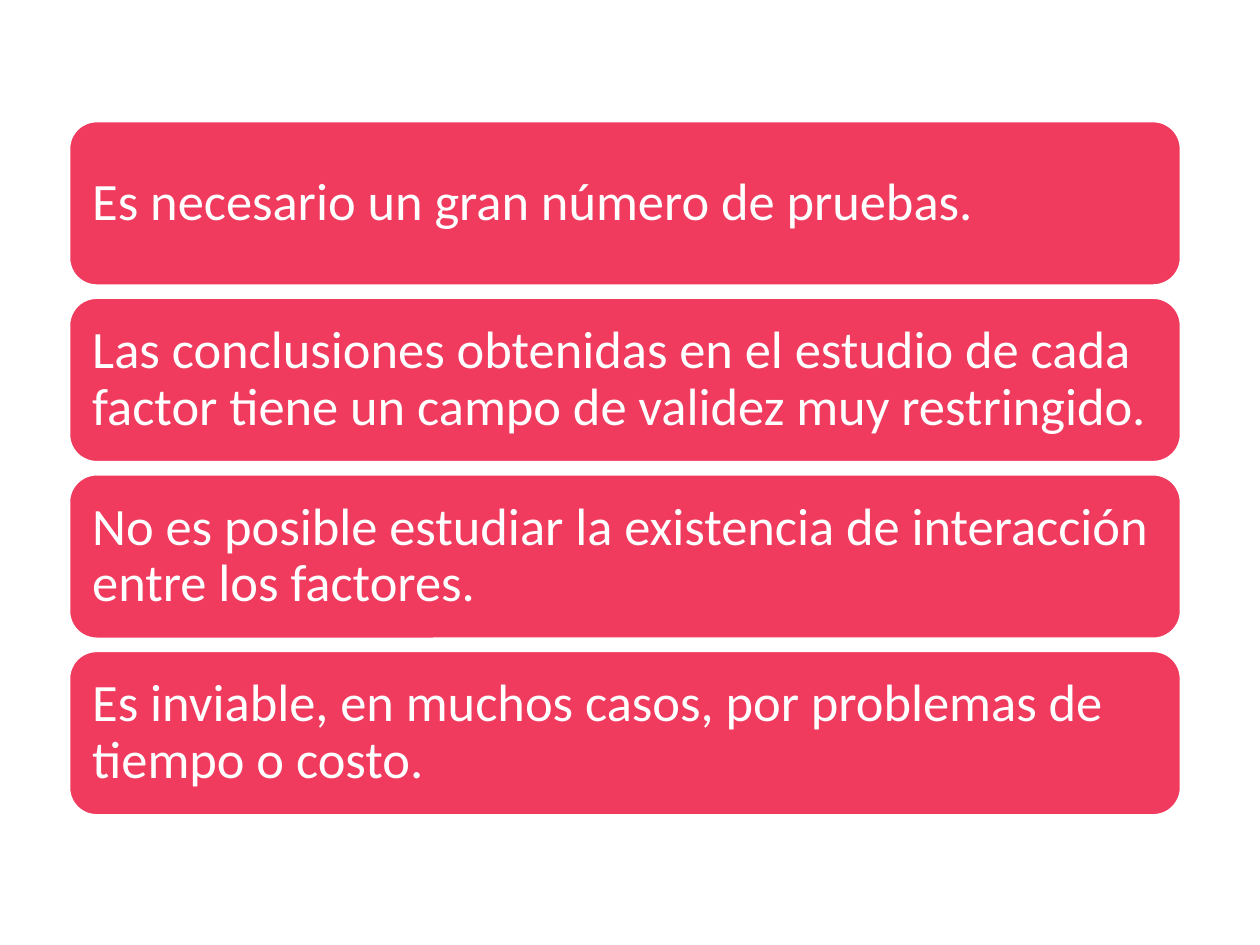
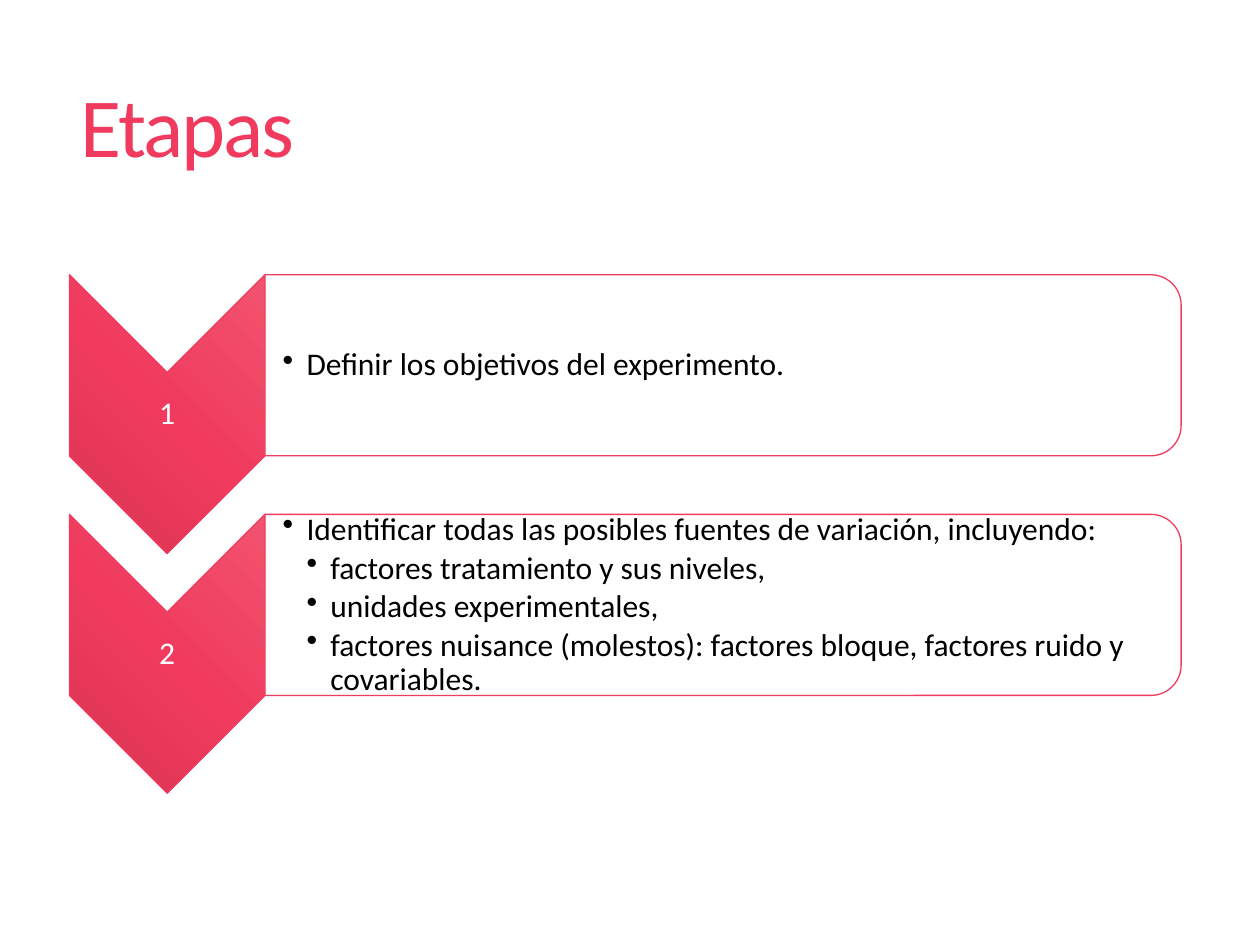
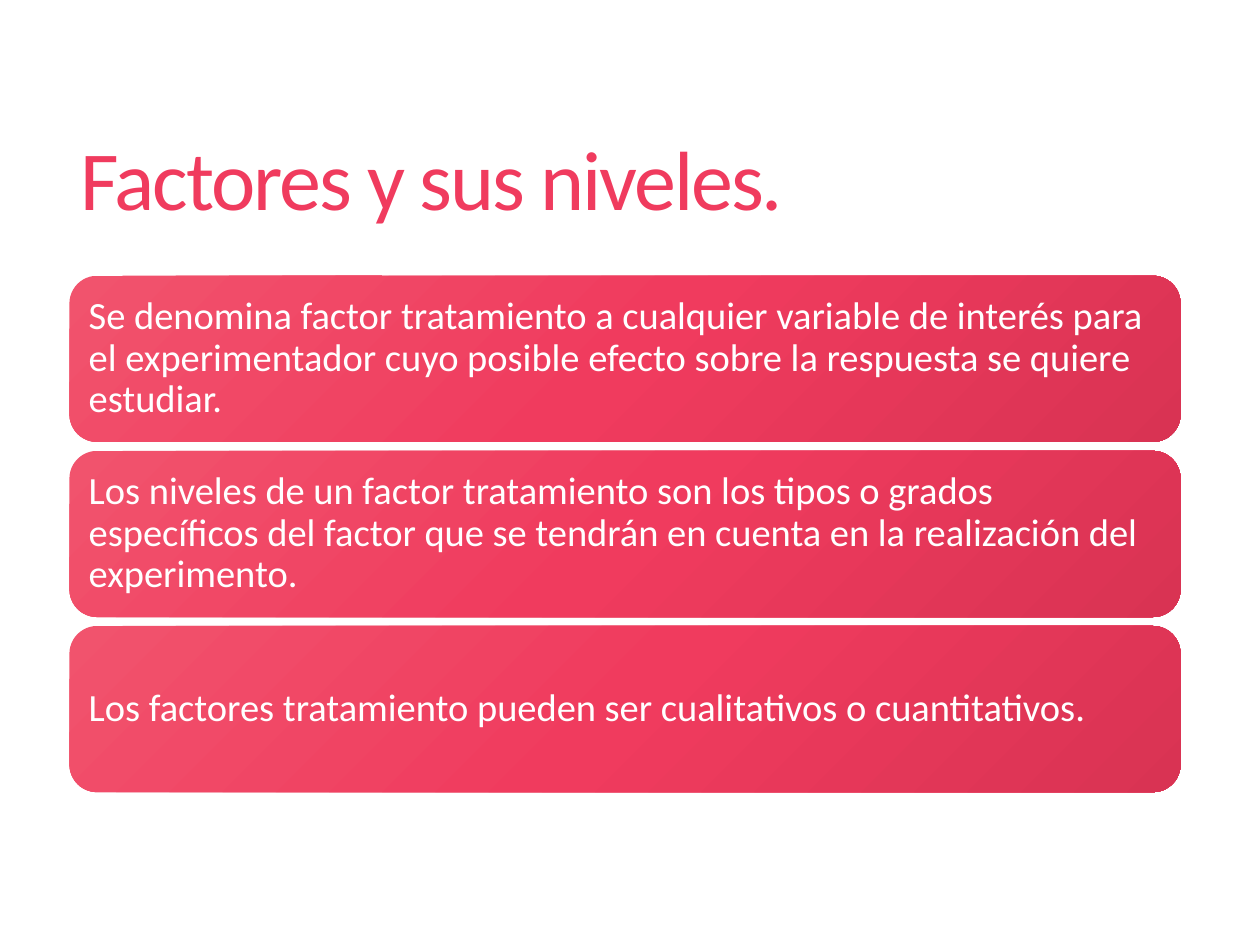
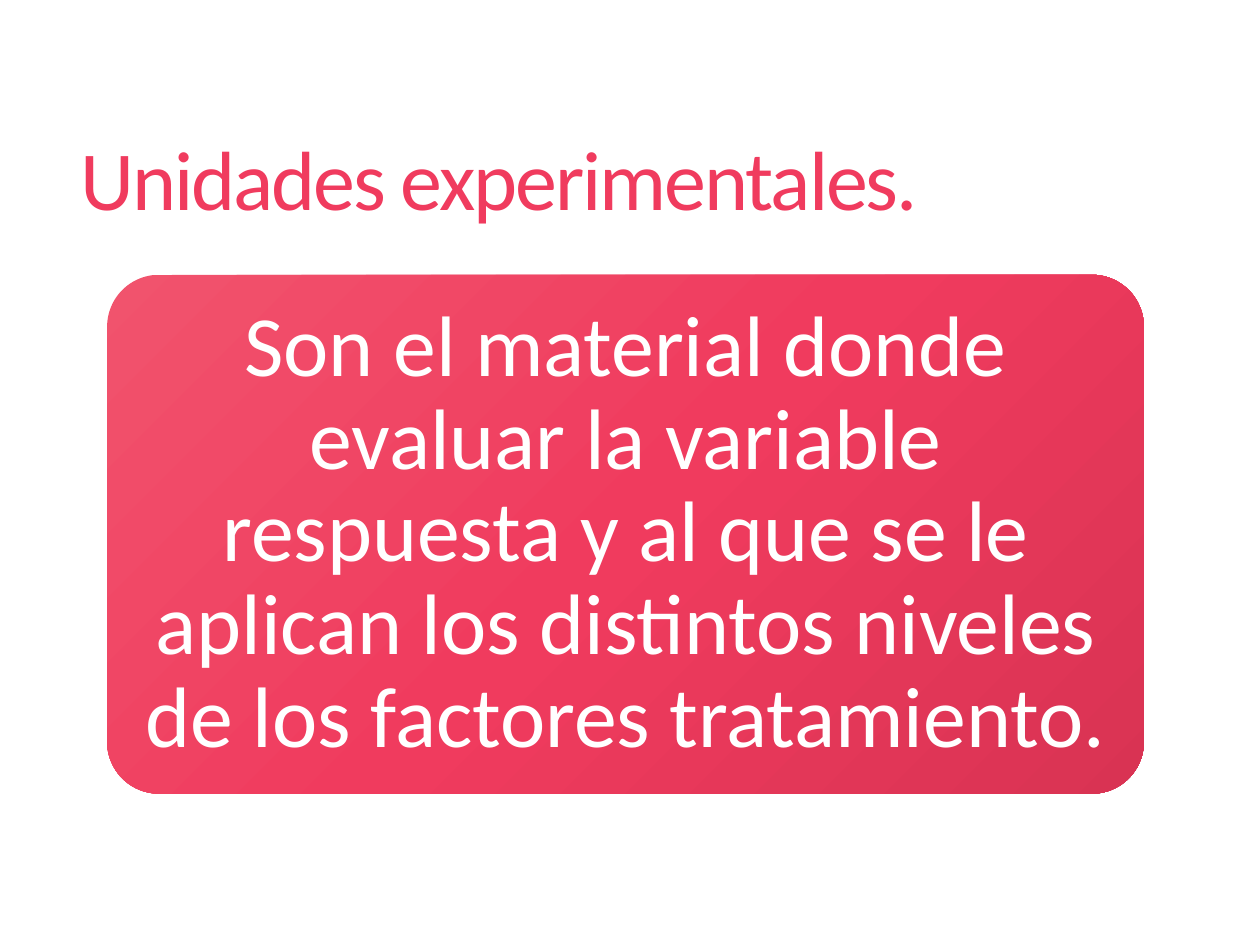
"""Build four slides on the design of experiments."""
from copy import deepcopy
from dataclasses import dataclass, replace
from typing import NamedTuple

from lxml.etree import SubElement
from pptx import Presentation
from pptx.dml.color import RGBColor
from pptx.enum.shapes import MSO_SHAPE
from pptx.enum.text import MSO_ANCHOR, PP_ALIGN
from pptx.oxml.ns import qn
from pptx.util import Cm, Pt

ROUND = MSO_SHAPE.ROUNDED_RECTANGLE
PANEL = MSO_SHAPE.ROUND_2_SAME_RECTANGLE
CHEVRON = MSO_SHAPE.CHEVRON
MIDDLE = MSO_ANCHOR.MIDDLE
LEFT = PP_ALIGN.LEFT
CENTER = PP_ALIGN.CENTER

ROSE = RGBColor(0xF0, 0x3B, 0x5E)
LIGHT = RGBColor(0xF1, 0x53, 0x6D)
DARK = RGBColor(0xD9, 0x33, 0x53)
WHITE = RGBColor(0xFF, 0xFF, 0xFF)
BLACK = RGBColor(0x00, 0x00, 0x00)

FONT = "Calibri"
SHADES = ((0, LIGHT), (0.5, ROSE), (1, DARK))
HANG = 0.48


class Item(NamedTuple):
    """A paragraph and its bullet level, zero for none."""
    text: str
    level: int = 0


@dataclass(frozen=True)
class Box:
    """A place on the slide in centimetres."""
    left: float
    top: float
    width: float
    height: float

    def inset(self, gap: float) -> "Box":
        """Shrink the box by a gap on each side."""
        return Box(self.left + gap, self.top + gap,
                   self.width - 2 * gap, self.height - 2 * gap)

    def row(self, index: int, pitch: float) -> "Box":
        """Move the box down by whole rows."""
        return replace(self, top=self.top + index * pitch)

    def turn(self) -> "Box":
        """Swap width and height about the centre."""
        shift = (self.width - self.height) / 2
        return Box(self.left + shift, self.top - shift, self.height, self.width)

    def place(self) -> tuple:
        """Give the place as lengths."""
        return Cm(self.left), Cm(self.top), Cm(self.width), Cm(self.height)


@dataclass(frozen=True)
class Style:
    """How a block of text looks; pads run left, top, right, bottom."""
    size: float
    color: RGBColor = WHITE
    align: PP_ALIGN = LEFT
    pads: tuple = (0.25, 0.13, 0.25, 0.13)
    after: float = 0
    track: int = 0


@dataclass(frozen=True)
class Look:
    """How a shape is filled and outlined; no fill colour means shades."""
    fill: RGBColor | None = None
    line: RGBColor | None = None
    weight: float = 0.75
    alpha: int = 100


TITLE = Style(48, ROSE, track=-120)
LARGE = Style(30, pads=(0.3,) * 4, after=0.35)
MEDIUM = Style(22, pads=(0.23,) * 4, after=0.35)
HUGE = Style(49, align=CENTER, pads=(0.25, 0.18, 0.25, 0.18), after=0.35)
NUMBER = Style(18, align=CENTER, pads=(0.03,) * 4, after=0.35)
LIST = Style(18, BLACK, pads=(0.36, 0.03, 0.03, 0.03), after=0.15)

FLAT = Look(ROSE, WHITE, 1)
SHADED = Look()
ARROW = Look(line=ROSE)
FRAME = Look(WHITE, ROSE, alpha=90)

LIMITS = (
    "Es necesario un gran número de pruebas.",
    "Las conclusiones obtenidas en el estudio de cada factor tiene un campo "
    "de validez muy restringido.",
    "No es posible estudiar la existencia de interacción entre los factores.",
    "Es inviable, en muchos casos, por problemas de tiempo o costo.",
)
STAGES = (
    (Item("Definir los objetivos del experimento.", 1),),
    (
        Item("Identificar todas las posibles fuentes de variación, incluyendo:", 1),
        Item("factores tratamiento y sus niveles,", 2),
        Item("unidades experimentales,", 2),
        Item("factores nuisance (molestos): factores bloque, factores ruido y "
             "covariables.", 2),
    ),
)
FACTORS = (
    "Se denomina factor tratamiento a cualquier variable de interés para el "
    "experimentador cuyo posible efecto sobre la respuesta se quiere estudiar.",
    "Los niveles de un factor tratamiento son los tipos o grados específicos del "
    "factor que se tendrán en cuenta en la realización del experimento.",
    "Los factores tratamiento pueden ser cualitativos o cuantitativos.",
)
UNITS = (
    "Son el material donde evaluar la variable respuesta y al que se le aplican "
    "los distintos niveles de los factores tratamiento."
)


def apply(target, values: dict) -> None:
    """Set each named attribute."""
    for name, value in values.items():
        setattr(target, name, value)


def bullet(para, level: int) -> None:
    """Give a paragraph a hanging bullet."""
    para.level = level
    props = para._p.get_or_add_pPr()
    props.set("marL", str(Cm(HANG * level)))
    props.set("indent", str(-Cm(HANG)))
    SubElement(props, qn("a:buChar")).set("char", "•")


def write(slide, box: Box, items: tuple, style: Style) -> None:
    """Add a text box holding the items."""
    frame = slide.shapes.add_textbox(*box.place()).text_frame
    sides = ("margin_left", "margin_top", "margin_right", "margin_bottom")
    apply(frame, {"word_wrap": True, "vertical_anchor": MIDDLE,
                  **dict(zip(sides, map(Cm, style.pads)))})
    for index, item in enumerate(items):
        para = frame.add_paragraph() if index else frame.paragraphs[0]
        apply(para, {"alignment": style.align, "line_spacing": 0.9,
                     "space_after": Pt(style.size * style.after)})
        if item.level:
            bullet(para, item.level)
        run = para.add_run()
        run.text = item.text
        apply(run.font, {"name": FONT, "size": Pt(style.size)})
        run.font.color.rgb = style.color
        if style.track:
            run._r.get_or_add_rPr().set("spc", str(style.track))


def shade(shape) -> None:
    """Fill a shape with the rose gradient."""
    fill = shape.fill
    fill.gradient()
    fill.gradient_angle = 315
    stops = shape.element.spPr.find(".//" + qn("a:gsLst"))
    stops.append(deepcopy(stops[0]))
    for stop, (place, color) in zip(fill.gradient_stops, SHADES):
        stop.position = place
        stop.color.rgb = color


def draw(slide, kind: MSO_SHAPE, box: Box, look: Look, turned: bool = False):
    """Add a shape that covers the box, turned by a quarter if asked."""
    frame = box.turn() if turned else box
    shape = slide.shapes.add_shape(kind, *frame.place())
    shape.shadow.inherit = False
    shape.rotation = 90 if turned else 0
    if look.fill is None:
        shade(shape)
    else:
        shape.fill.solid()
        shape.fill.fore_color.rgb = look.fill
    if look.alpha < 100:
        color = shape.element.spPr.find(qn("a:solidFill"))[0]
        SubElement(color, qn("a:alpha")).set("val", str(look.alpha * 1000))
    if look.line is None:
        shape.line.fill.background()
    else:
        shape.line.color.rgb = look.line
        shape.line.width = Pt(look.weight)
    return shape


def head(slide, text: str, top: float = 1.4) -> None:
    """Add the slide title."""
    write(slide, Box(1.37, top, 22.45, 4.6), (Item(text),), TITLE)


def stack(slide, first: Box, pitch: float, texts: tuple, look: Look,
          style: Style) -> None:
    """Add a column of rounded cards."""
    for index, text in enumerate(texts):
        card = first.row(index, pitch)
        draw(slide, ROUND, card, look)
        write(slide, card.inset(0.16), (Item(text),), style)


def steps(slide) -> None:
    """Add the numbered stages with their lists."""
    for index, items in enumerate(STAGES):
        arrow, label, panel, notes = (
            box.row(index, 4.83) for box in (
                Box(1.4, 5.54, 3.94, 5.62), Box(1.4, 7.52, 3.94, 1.68),
                Box(5.34, 5.54, 18.47, 3.65), Box(5.34, 5.72, 18.29, 3.3)))
        draw(slide, CHEVRON, arrow, ARROW, True)
        write(slide, label, (Item(str(index + 1)),), NUMBER)
        draw(slide, PANEL, panel, FRAME, True)
        write(slide, notes, items, LIST)


def main() -> None:
    """Build and save the deck."""
    deck = Presentation()
    apply(deck, {"slide_width": Cm(25.4), "slide_height": Cm(19.05)})
    blank = deck.slide_layouts[6]
    limits, stages, factors, units = (
        deck.slides.add_slide(blank) for _ in range(4))

    stack(limits, Box(1.4, 2.45, 22.4, 3.3), 3.56, LIMITS, FLAT, LARGE)

    head(stages, "Etapas", 0.33)
    steps(stages)

    head(factors, "Factores y sus niveles.")
    stack(factors, Box(1.4, 5.56, 22.4, 3.35), 3.53, FACTORS, SHADED, MEDIUM)

    head(units, "Unidades experimentales.")
    card = Box(2.16, 5.54, 20.9, 10.46)
    draw(units, ROUND, card, SHADED).adjustments[0] = 0.1
    write(units, card.inset(0.3), (Item(UNITS),), HUGE)

    deck.save("out.pptx")


if __name__ == "__main__":
    main()
